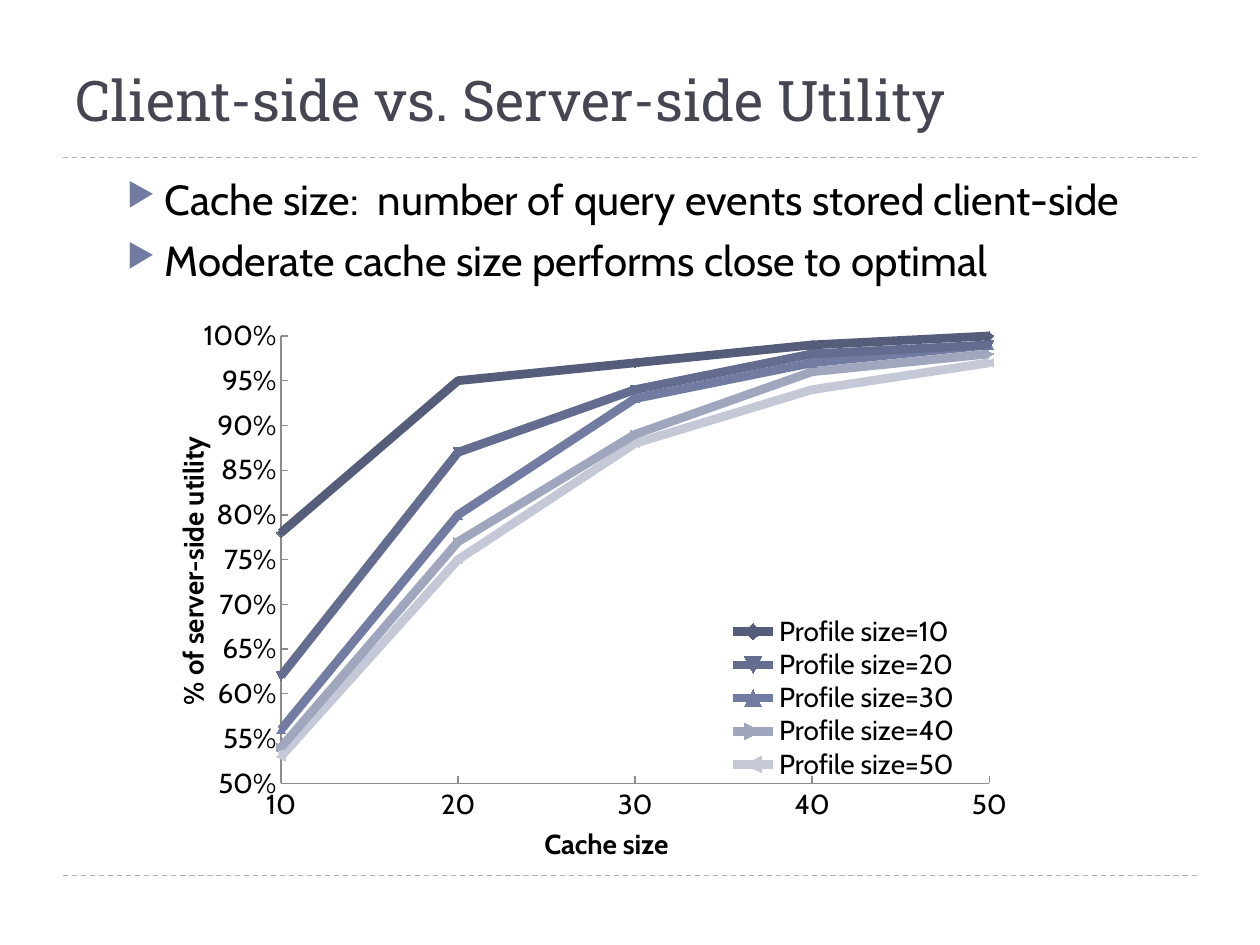
from dataclasses import dataclass

from lxml.etree import SubElement
from pptx import Presentation
from pptx.chart.data import XyChartData
from pptx.dml.color import RGBColor
from pptx.enum.chart import XL_CHART_TYPE, XL_LEGEND_POSITION, XL_TICK_MARK
from pptx.enum.dml import MSO_LINE
from pptx.enum.shapes import MSO_CONNECTOR
from pptx.enum.text import MSO_ANCHOR
from pptx.oxml import parse_xml
from pptx.oxml.ns import nsdecls, qn
from pptx.util import Cm, Pt

COLORS = {
    "title": "464653",
    "text": "000000",
    "bullet": "727CA3",
    "rule": "B0B0B0",
    "axis": "8C8C8C",
}
HEADING_FONT = "Roboto Slab"
BODY_FONT = "Cabin"
CACHE_SIZES = [10, 20, 30, 40, 50]


@dataclass
class Profile:
    size: int
    color: str
    utility: list[float]


@dataclass
class AxisSpec:
    title: str
    low: float
    high: float
    step: float
    number_format: str
    title_pos: tuple[float, float]


PROFILES = [
    Profile(10, "565D7B", [0.78, 0.95, 0.97, 0.99, 1]),
    Profile(20, "646C90", [0.62, 0.87, 0.94, 0.98, 0.99]),
    Profile(30, "727CA3", [0.56, 0.8, 0.93, 0.97, 0.99]),
    Profile(40, "A1A6BF", [0.54, 0.77, 0.89, 0.96, 0.98]),
    Profile(50, "C5C8D6", [0.53, 0.75, 0.88, 0.94, 0.97]),
]
CACHE_AXIS = AxisSpec("Cache size", 10, 50, 10, "0", (0.44, 0.93))
UTILITY_AXIS = AxisSpec("% of server-side utility", 0.5, 1, 0.05, "0%", (0.02, 0.24))
BULLETS = [
    "Cache size:  number of query events stored client-side",
    "Moderate cache size performs close to optimal",
]


def rgb(value: str) -> RGBColor:
    return RGBColor.from_string(value)


def style_font(font, name: str, size: float, color: str, bold: bool = False) -> None:
    font.name = name
    font.size = Pt(size)
    font.bold = bold
    font.color.rgb = rgb(color)


def add_rule(s, y: float) -> None:
    line = s.shapes.add_connector(MSO_CONNECTOR.STRAIGHT, Cm(1.27), Cm(y), Cm(24.13), Cm(y))
    line.line.color.rgb = rgb(COLORS["rule"])
    line.line.width = Pt(0.75)
    line.line.dash_style = MSO_LINE.DASH
    SubElement(line._element.spPr, qn("a:effectLst"))


def add_title(s, text: str) -> None:
    sp = s.shapes.add_textbox(Cm(1.27), Cm(0.41), Cm(22.86), Cm(3.18))
    tf = sp.text_frame
    tf.word_wrap = True
    tf.vertical_anchor = MSO_ANCHOR.MIDDLE
    tf.text = text
    style_font(tf.paragraphs[0].runs[0].font, HEADING_FONT, 32, COLORS["title"])


def add_bullets(s, items: list[str]) -> None:
    sp = s.shapes.add_textbox(Cm(2.31), Cm(3.38), Cm(23), Cm(13.03))
    tf = sp.text_frame
    tf.word_wrap = True
    for i, item in enumerate(items):
        p = tf.add_paragraph() if i else tf.paragraphs[0]
        p.text = item
        p.space_before = Pt(6 if i else 0)
        pPr = p._p.get_or_add_pPr()
        pPr.set("marL", str(Cm(0.76)))
        pPr.set("indent", str(-Cm(0.76)))
        color = SubElement(pPr, qn("a:buClr"))
        SubElement(color, qn("a:srgbClr"), val=COLORS["bullet"])
        SubElement(pPr, qn("a:buSzPct"), val="76000")
        SubElement(pPr, qn("a:buChar"), char="▶")
        style_font(p.runs[0].font, BODY_FONT, 24, COLORS["text"])


def place(parent, index: int, x: float, y: float,
          size: tuple[float, float] | None = None, inner: bool = False) -> None:
    for old in parent.findall(qn("c:layout")):
        parent.remove(old)
    layout = parse_xml(f"<c:layout {nsdecls('c')}><c:manualLayout/></c:layout>")
    parent.insert(index, layout)
    fields = [("layoutTarget", "inner")] if inner else []
    fields += [("xMode", "edge"), ("yMode", "edge"), ("x", x), ("y", y)]
    if size:
        fields += [("w", size[0]), ("h", size[1])]
    for tag, value in fields:
        SubElement(layout[0], qn(f"c:{tag}"), val=str(value))


def style_axis(axis, spec: AxisSpec) -> None:
    axis.minimum_scale = spec.low
    axis.maximum_scale = spec.high
    axis.major_unit = spec.step
    axis.has_major_gridlines = False
    axis.major_tick_mark = XL_TICK_MARK.INSIDE
    axis.minor_tick_mark = XL_TICK_MARK.NONE
    axis.tick_labels.number_format = spec.number_format
    axis.tick_labels.number_format_is_linked = False
    axis.format.line.color.rgb = rgb(COLORS["axis"])
    axis.format.line.width = Pt(0.75)
    tf = axis.axis_title.text_frame
    tf.text = spec.title
    style_font(tf.paragraphs[0].runs[0].font, BODY_FONT, 16, COLORS["text"], True)
    place(axis.axis_title._element, 1, *spec.title_pos)


def add_utility_chart(s) -> None:
    data = XyChartData()
    for profile in PROFILES:
        series = data.add_series(f"Profile size={profile.size}")
        for x, y in zip(CACHE_SIZES, profile.utility):
            series.add_data_point(x, y)
    chart = s.shapes.add_chart(
        XL_CHART_TYPE.XY_SCATTER_LINES, Cm(3.05), Cm(6.1), Cm(17.78), Cm(11.43), data
    ).chart
    chart.has_title = False
    style_font(chart.font, BODY_FONT, 16, COLORS["text"])
    plot = chart.plots[0]
    plot.vary_by_categories = False
    for series, profile in zip(plot.series, PROFILES):
        series.smooth = False
        series.format.line.width = Pt(5)
        series.format.line.color.rgb = rgb(profile.color)
        series.marker.format.fill.solid()
        series.marker.format.fill.fore_color.rgb = rgb(profile.color)
        series.marker.format.line.color.rgb = rgb(profile.color)
    style_axis(chart.category_axis, CACHE_AXIS)
    style_axis(chart.value_axis, UTILITY_AXIS)
    chart.has_legend = True
    chart.legend.position = XL_LEGEND_POSITION.RIGHT
    chart.legend.include_in_layout = False
    style_font(chart.legend.font, BODY_FONT, 16, COLORS["text"])
    place(chart.legend._element, 1, 0.65, 0.56, (0.27, 0.3))
    plot_area = chart._chartSpace.chart.plotArea
    place(plot_area, 0, 0.147, 0.06, (0.803, 0.803), inner=True)


def main() -> None:
    prs = Presentation()
    prs.slide_width = Cm(25.4)
    prs.slide_height = Cm(19.05)
    s = prs.slides.add_slide(prs.slide_layouts[6])
    for y in (17.65, 3.17):
        add_rule(s, y)
    add_title(s, "Client-side vs. Server-side Utility")
    add_bullets(s, BULLETS)
    add_utility_chart(s)
    prs.save("out.pptx")


if __name__ == "__main__":
    main()
